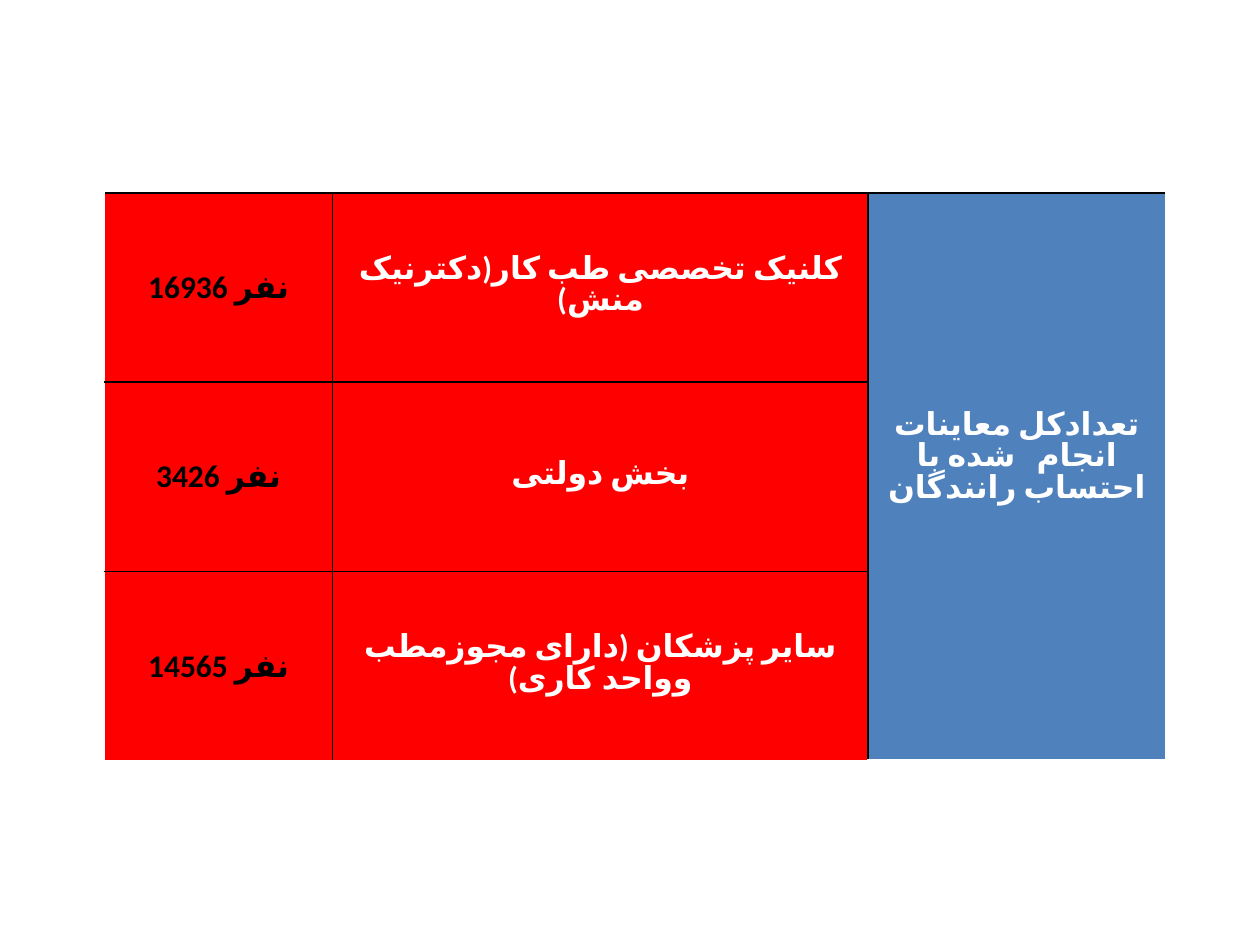
from lxml import etree
from pptx import Presentation
from pptx.dml.color import RGBColor
from pptx.enum.lang import MSO_LANGUAGE_ID
from pptx.enum.text import MSO_ANCHOR, PP_ALIGN
from pptx.oxml.ns import qn
from pptx.util import Inches, Pt

CENTER = PP_ALIGN.CENTER
MIDDLE = MSO_ANCHOR.MIDDLE
PERSIAN = MSO_LANGUAGE_ID.FARSI
FONT_NAME = "Calibri"
RED = RGBColor(0xFF, 0x00, 0x00)
BLUE = RGBColor(0x4F, 0x81, 0xBD)
BLACK = RGBColor(0x00, 0x00, 0x00)
WHITE = RGBColor(0xFF, 0xFF, 0xFF)

COLUMN_WIDTHS = (1.81, 4.25, 2.36)
HEADING = "تعدادکل معاینات انجام   شده با احتساب رانندگان"
EXAMINATIONS = (
    ("16936 نفر", "کلنیک تخصصی طب کار(دکترنیک منش)"),
    ("3426 نفر", "بخش دولتی"),
    ("14565 نفر", "سایر پزشکان (دارای مجوزمطب وواحد کاری)"),
)


def set_borders(cell, left, right, top, bottom, bottom_width=1):
    """Give the four sides of a cell solid lines of the given colours."""
    properties = cell._tc.get_or_add_tcPr()
    sides = (("L", left, 1), ("R", right, 1), ("T", top, 1), ("B", bottom, bottom_width))
    for index, (side, color, width) in enumerate(sides):
        line = etree.Element(qn(f"a:ln{side}"), w=str(Pt(width)))
        fill = etree.SubElement(line, qn("a:solidFill"))
        etree.SubElement(fill, qn("a:srgbClr"), val=str(color))
        properties.insert(index, line)


def fill_cell(cell, text, fill_color, text_color, right_to_left=True):
    """Write centred bold text in a cell and colour it."""
    cell.fill.solid()
    cell.fill.fore_color.rgb = fill_color
    cell.vertical_anchor = MIDDLE
    cell.text_frame.text = text
    para = cell.text_frame.paragraphs[0]
    para.alignment = CENTER
    if right_to_left:
        para.line_spacing = Pt(18)
        para._p.get_or_add_pPr().set("rtl", "1")
    span = para.runs[0]
    span.font.name = FONT_NAME
    span.font.size = Pt(18)
    span.font.bold = True
    span.font.color.rgb = text_color
    span.font.language_id = PERSIAN
    etree.SubElement(span._r.get_or_add_rPr(), qn("a:cs"), typeface=FONT_NAME)


def add_examination_table(page, left, top, width, height):
    """Place the table of examination counts in the given box."""
    table = page.shapes.add_table(
        len(EXAMINATIONS), len(COLUMN_WIDTHS), left, top, width, height
    ).table
    table.first_row = False
    table.horz_banding = False
    for column, column_width in zip(table.columns, COLUMN_WIDTHS):
        column.width = Inches(column_width)

    last_row = len(EXAMINATIONS) - 1
    for row, (count, provider) in enumerate(EXAMINATIONS):
        bottom = WHITE if row == last_row else BLACK
        count_cell, provider_cell = table.cell(row, 0), table.cell(row, 1)
        fill_cell(count_cell, count, RED, BLACK, right_to_left=False)
        set_borders(count_cell, WHITE, BLACK, BLACK, bottom)
        fill_cell(provider_cell, provider, RED, WHITE)
        set_borders(provider_cell, BLACK, BLACK, BLACK, bottom)

    heading_cell = table.cell(0, 2)
    heading_cell.merge(table.cell(last_row, 2))
    fill_cell(heading_cell, HEADING, BLUE, WHITE)
    heading_cell.margin_bottom = Inches(0.33)
    set_borders(heading_cell, BLACK, WHITE, BLACK, WHITE, bottom_width=3)


def main():
    """Build the slide and save the deck."""
    deck = Presentation()
    deck.slide_width = Inches(10)
    deck.slide_height = Inches(7.5)
    page = deck.slides.add_slide(deck.slide_layouts[6])
    add_examination_table(page, Inches(0.83), Inches(1.53), Inches(8.42), Inches(4.51))
    deck.save("out.pptx")


if __name__ == "__main__":
    main()
